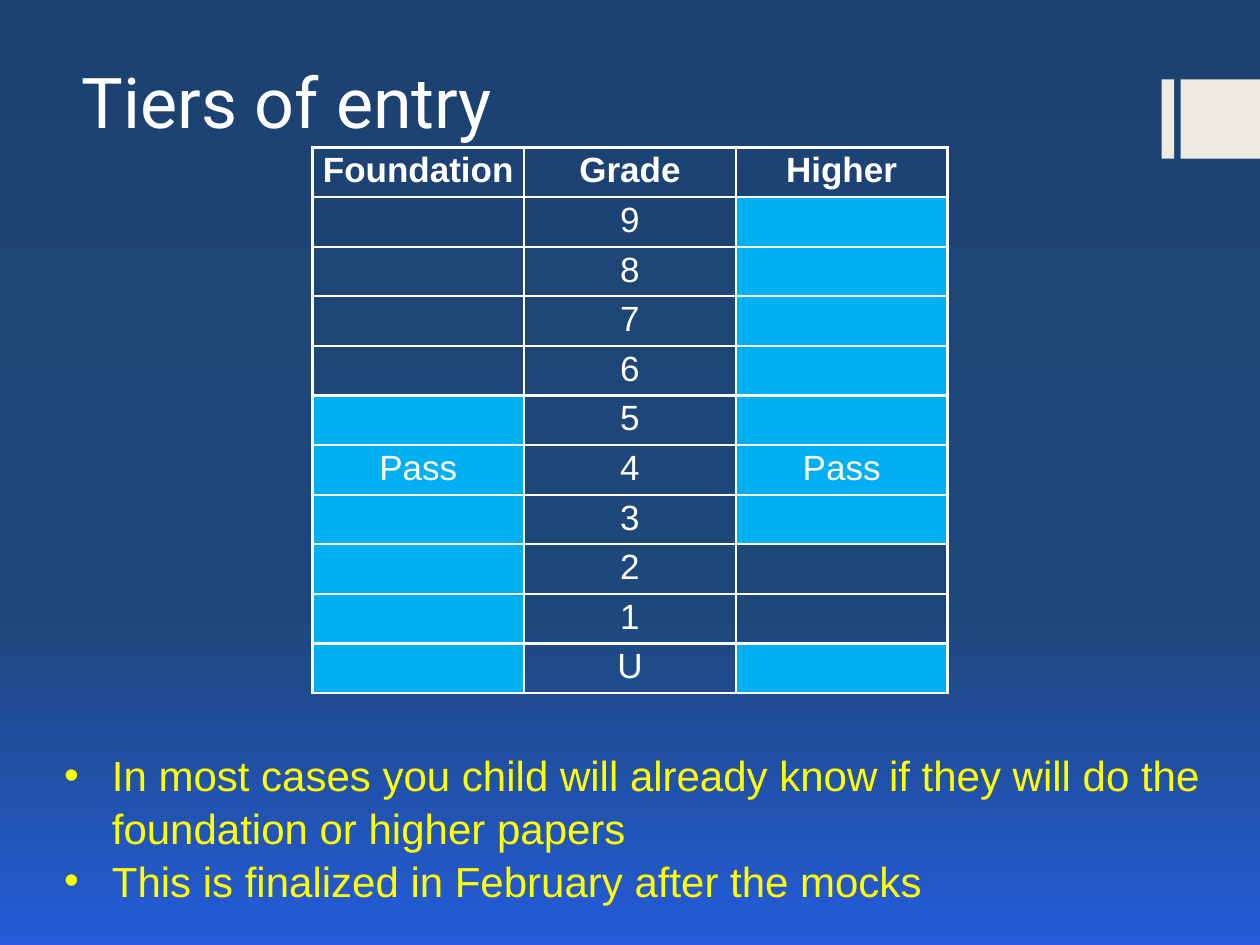
from copy import deepcopy
from dataclasses import dataclass

from lxml import etree
from pptx import Presentation
from pptx import util as u
from pptx.dml.color import RGBColor
from pptx.enum import shapes, text
from pptx.oxml.ns import qn

WIDTH, HEIGHT = 10, 7.5
COLORS = {"white": "FFFFFF", "cream": "EEECE1", "cyan": "00B0F0", "yellow": "FFFF00"}
BACKGROUND = [(0, "1C4271"), (0.65, "1E477A"), (1, "245CD9")]
GRADES = "987654321U"
TAKEN = {"Foundation": "54321U", "Higher": "9876543U"}
PASS_GRADE = "4"
COLUMN, ROW = 1.68, 0.392
BULLETS = [
    "In most cases you child will already know if they will do the foundation or higher papers",
    "This is finalized in February after the mocks",
]


@dataclass
class Area:
    """A rectangle given as shares of the slide's width and height."""
    left: float
    top: float
    width: float
    height: float

    def lengths(self) -> list:
        sides = (self.left * WIDTH, self.top * HEIGHT, self.width * WIDTH, self.height * HEIGHT)
        return [u.Inches(side) for side in sides]


@dataclass
class Style:
    name: str
    size: float
    color: str
    bold: bool = False

    def apply(self, font) -> None:
        for key, value in {"name": self.name, "size": u.Pt(self.size), "bold": self.bold}.items():
            setattr(font, key, value)
        font.color.rgb = RGBColor.from_string(COLORS[self.color])


def paint_background(page) -> None:
    fill = page.background.fill
    fill.gradient()
    fill.gradient_angle = 270
    stop_list = page.element.find(".//" + qn("a:gsLst"))
    stop_list.append(deepcopy(stop_list[0]))
    for stop, (position, color) in zip(fill.gradient_stops, BACKGROUND):
        stop.position = position
        stop.color.rgb = RGBColor.from_string(color)


def add_block(page, area: Area) -> None:
    block = page.shapes.add_shape(shapes.MSO_SHAPE.RECTANGLE, *area.lengths())
    block.shadow.inherit = False
    block.fill.solid()
    block.fill.fore_color.rgb = RGBColor.from_string(COLORS["cream"])
    block.line.fill.background()


def add_text(page, area: Area, lines: list[str], style: Style, anchor, bulleted: bool = False) -> None:
    frame = page.shapes.add_textbox(*area.lengths()).text_frame
    frame.word_wrap = True
    frame.vertical_anchor = anchor
    for index, line in enumerate(lines):
        para = frame.add_paragraph() if index else frame.paragraphs[0]
        if bulleted:
            para.line_spacing = 1.05
            props = para._p.get_or_add_pPr()
            indent = u.Inches(0.38)
            props.set("marL", str(indent))
            props.set("indent", str(-indent))
            etree.SubElement(props, qn("a:buFont")).set("typeface", "Arial")
            etree.SubElement(props, qn("a:buChar")).set("char", "•")
        span = para.add_run()
        span.text = line
        style.apply(span.font)


def add_borders(cell) -> None:
    props = cell._tc.get_or_add_tcPr()
    for side in ("lnL", "lnR", "lnT", "lnB"):
        line = etree.SubElement(props, qn("a:" + side), w=str(u.Pt(1.5)))
        fill = etree.SubElement(line, qn("a:solidFill"))
        etree.SubElement(fill, qn("a:srgbClr"), val=COLORS["white"])


def fill_cell(cell, label: str, shaded: bool, style: Style) -> None:
    add_borders(cell)
    margins = {"margin_left": 0.08, "margin_right": 0.08, "margin_top": 0.03, "margin_bottom": 0.03}
    for key, value in margins.items():
        setattr(cell, key, u.Inches(value))
    if shaded:
        cell.fill.solid()
        cell.fill.fore_color.rgb = RGBColor.from_string(COLORS["cyan"])
    else:
        cell.fill.background()
    para = cell.text_frame.paragraphs[0]
    para.alignment = text.PP_ALIGN.CENTER
    style.apply(para.font)
    if label:
        span = para.add_run()
        span.text = label
        style.apply(span.font)


def add_grade_table(page) -> None:
    headers = ["Foundation", "Grade", "Higher"]
    rows = len(GRADES) + 1
    area = Area(0.248, 1.17 / HEIGHT, len(headers) * COLUMN / WIDTH, rows * ROW / HEIGHT)
    table = page.shapes.add_table(rows, len(headers), *area.lengths()).table
    table.first_row = table.horz_banding = False
    for column in table.columns:
        column.width = u.Inches(COLUMN)
    for row in table.rows:
        row.height = u.Inches(ROW)
    head, body = Style("Arial", 20, "white", True), Style("Arial", 20, "white")
    for column, header in enumerate(headers):
        fill_cell(table.cell(0, column), header, False, head)
        for row, grade in enumerate(GRADES, start=1):
            shaded = grade in TAKEN.get(header, "")
            if header == "Grade":
                label = grade
            else:
                label = "Pass" if grade == PASS_GRADE else ""
            fill_cell(table.cell(row, column), label, shaded, body)


def main() -> None:
    deck = Presentation()
    deck.slide_width, deck.slide_height = u.Inches(WIDTH), u.Inches(HEIGHT)
    page = deck.slides.add_slide(deck.slide_layouts[6])
    paint_background(page)
    for left, width in ((0.922, 0.01), (0.937, 0.063)):
        add_block(page, Area(left, 0.084, width, 0.084))
    add_text(page, Area(0.055, 0.012, 0.945, 0.145), ["Tiers of entry"],
             Style("Roboto", 40, "white"), text.MSO_ANCHOR.BOTTOM)
    add_grade_table(page)
    add_text(page, Area(0.041, 0.784, 0.978, 0.23), BULLETS,
             Style("Arial", 24, "yellow"), text.MSO_ANCHOR.TOP, bulleted=True)
    deck.save("out.pptx")


if __name__ == "__main__":
    main()
